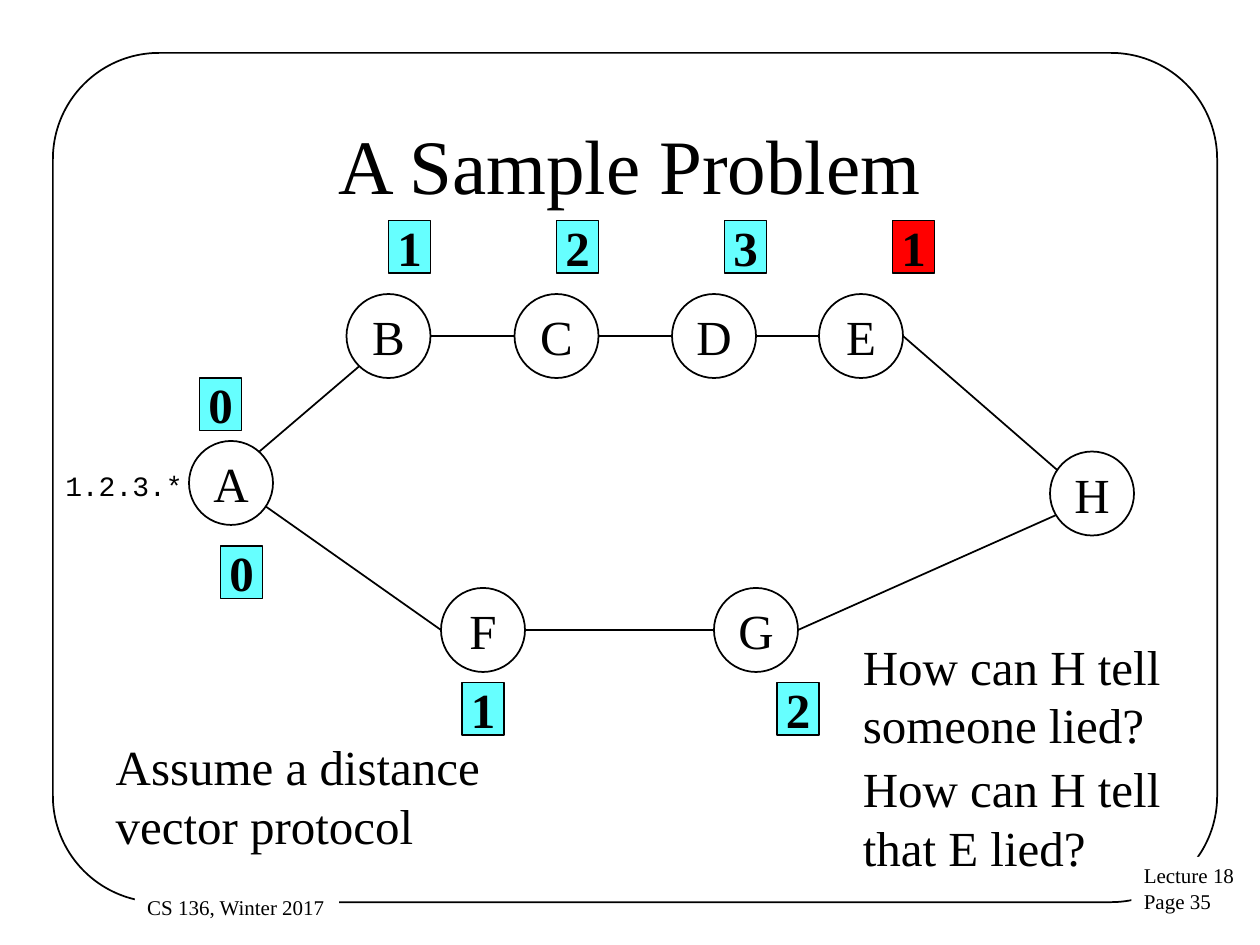
from math import cos, radians, sin
from lxml import etree
from pptx import Presentation
from pptx.dml.color import RGBColor
from pptx.enum.shapes import MSO_CONNECTOR, MSO_SHAPE
from pptx.enum.text import MSO_ANCHOR, PP_ALIGN
from pptx.oxml.ns import qn
from pptx.util import Inches, Pt

OVAL, RECT, ROUND = MSO_SHAPE.OVAL, MSO_SHAPE.RECTANGLE, MSO_SHAPE.ROUNDED_RECTANGLE
LINE = MSO_CONNECTOR.STRAIGHT
MID, TOP = MSO_ANCHOR.MIDDLE, MSO_ANCHOR.TOP
LEFT, MIDDLE = PP_ALIGN.LEFT, PP_ALIGN.CENTER

GRID = 1 / 12
NODE = 8
TAG = (4, 5)
BLACK, WHITE, CYAN, RED = "000000", "FFFFFF", "66FFFF", "FF0000"
SERIF, MONO = "Times New Roman", "Courier New"

NODES = {
    "A": (18, 42), "B": (33, 28), "C": (49, 28), "D": (64, 28),
    "E": (78, 28), "F": (42, 56), "G": (68, 56), "H": (100, 43),
}
LINKS = [
    ("A", -48, "B", 134), ("A", 34, "F", 180),
    ("B", 0, "C", 180), ("C", 0, "D", 180), ("D", 0, "E", 180),
    ("F", 0, "G", 180), ("G", 0, "H", 149), ("E", 0, "H", 214),
]
TAGS = [
    ("0", 19, 36, CYAN), ("0", 21, 52, CYAN), ("1", 37, 21, CYAN),
    ("1", 44, 65, CYAN), ("2", 74, 65, CYAN), ("2", 53, 21, CYAN),
    ("3", 69, 21, CYAN), ("1", 85, 21, RED),
]
FOOTS = [
    (["Lecture 18", "Page 35"], (8.98, 6.8, 0.93, 0.51)),
    (["CS 136, Winter 2017"], (1.07, 7.05, 1.62, 0.3)),
]
NOTES = [
    ("Assume a distance vector protocol", (0.82, 5.8, 3.1, 1.03), {}),
    ("1.2.3.*", (0.42, 3.67, 1.14, 0.37), {"size": 16, "name": MONO, "wrap": False}),
    ("How can H tell someone lied?", (6.75, 5, 2.77, 1.03), {}),
    ("How can H tell that E lied?", (6.75, 5.97, 2.77, 1.03), {}),
]


def color(code):
    return RGBColor.from_string(code)


def write(shape, lines, size=28, name=SERIF, bold=False, align=LEFT, anchor=TOP, wrap=True):
    frame = shape.text_frame
    frame.word_wrap, frame.vertical_anchor = wrap, anchor
    frame.text = "\n".join(lines)
    for para in frame.paragraphs:
        para.alignment = align
        for key, value in {"size": Pt(size), "name": name, "bold": bold}.items():
            setattr(para.font, key, value)
        para.font.color.rgb = color(BLACK)


def draw(kind, box, fill=None, edge=True):
    shape = slide.shapes.add_shape(kind, *map(Inches, box))
    shape.shadow.inherit = False
    if fill:
        shape.fill.solid()
        shape.fill.fore_color.rgb = color(fill)
    else:
        shape.fill.background()
    if edge:
        shape.line.color.rgb = color(BLACK)
        shape.line.width = Pt(1)
    else:
        shape.line.fill.background()
    return shape


def cells(*units):
    return [unit * GRID for unit in units]


def rim(name, angle):
    col, row = NODES[name]
    half, turn = NODE / 2, radians(angle)
    ends = cells(col + half + half * cos(turn), row + half + half * sin(turn))
    return [Inches(end) for end in ends]


deck = Presentation()
deck.slide_width, deck.slide_height = Inches(10), Inches(7.5)
slide = deck.slides.add_slide(deck.slide_layouts[6])

frame = draw(ROUND, (0.42, 0.42, 9.24, 6.74))
frame.adjustments[0] = 0.125
for lines, box in FOOTS:
    write(draw(RECT, box, WHITE, False), lines, 12, wrap=False)

title = slide.shapes.add_textbox(*map(Inches, (0.75, 0.67, 8.5, 1.25)))
write(title, ["A Sample Problem"], 44, align=MIDDLE, anchor=MID)

for name, (col, row) in NODES.items():
    node = draw(OVAL, cells(col, row, NODE, NODE))
    write(node, [name], align=MIDDLE, anchor=MID, wrap=False)

for start, out, stop, into in LINKS:
    link = slide.shapes.add_connector(LINE, *rim(start, out), *rim(stop, into))
    link.line.color.rgb = color(BLACK)
    link.line.width = Pt(1)
    etree.SubElement(link._element.spPr, qn("a:effectLst"))

for text, col, row, fill in TAGS:
    tag = draw(RECT, cells(col, row, *TAG), fill)
    write(tag, [text], bold=True, align=MIDDLE, anchor=MID, wrap=False)

for text, box, form in NOTES:
    write(slide.shapes.add_textbox(*map(Inches, box)), [text], **form)

deck.save("out.pptx")
